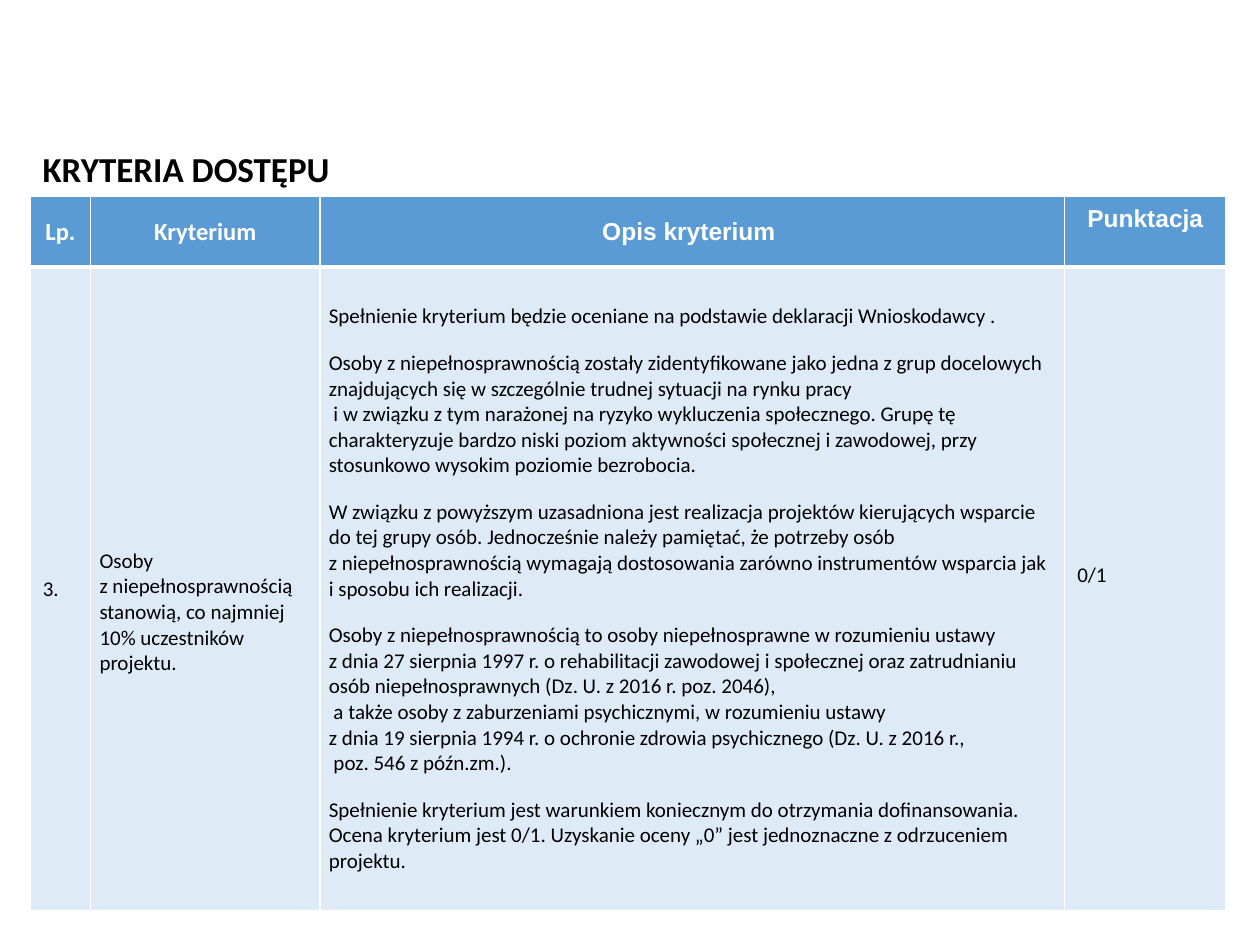
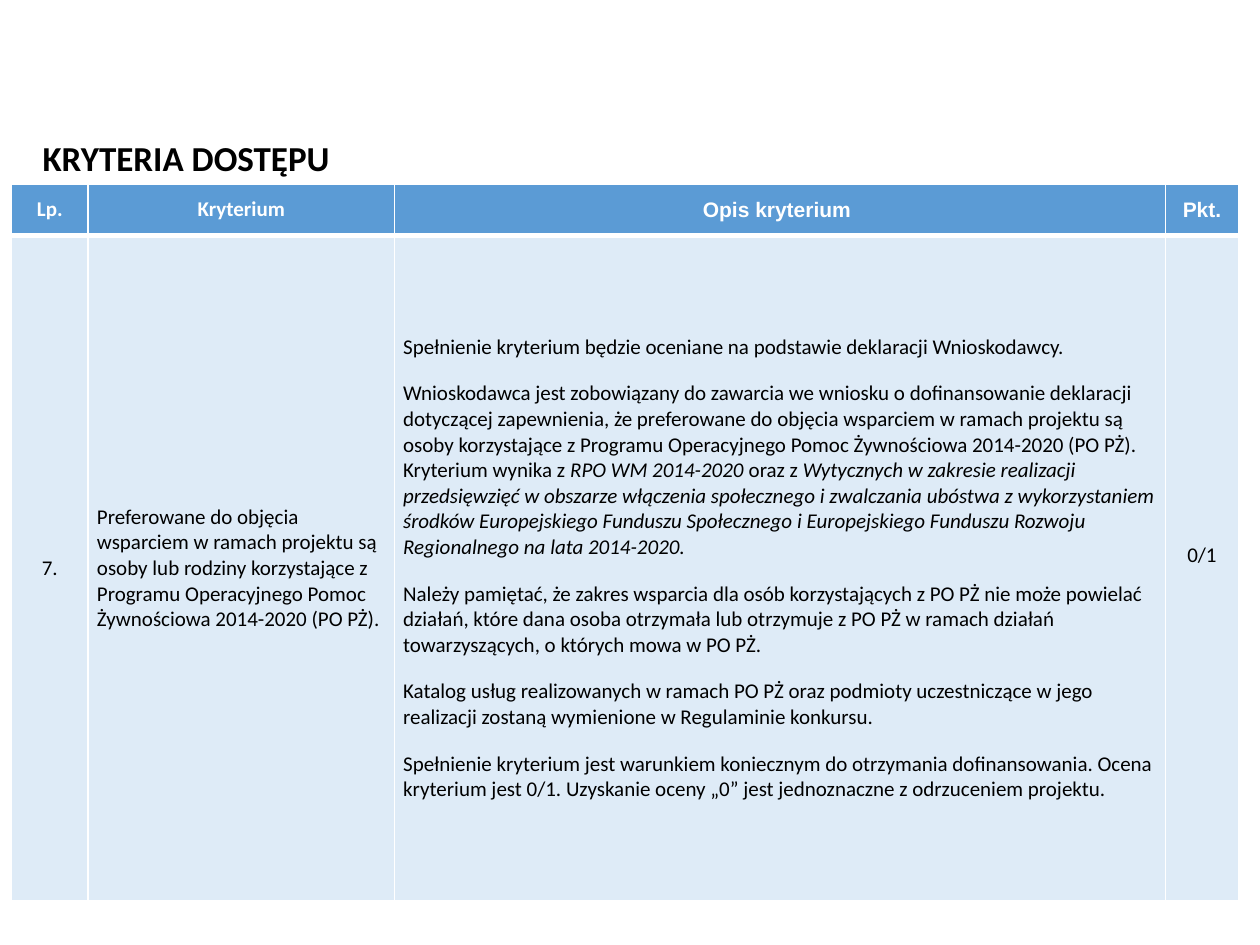
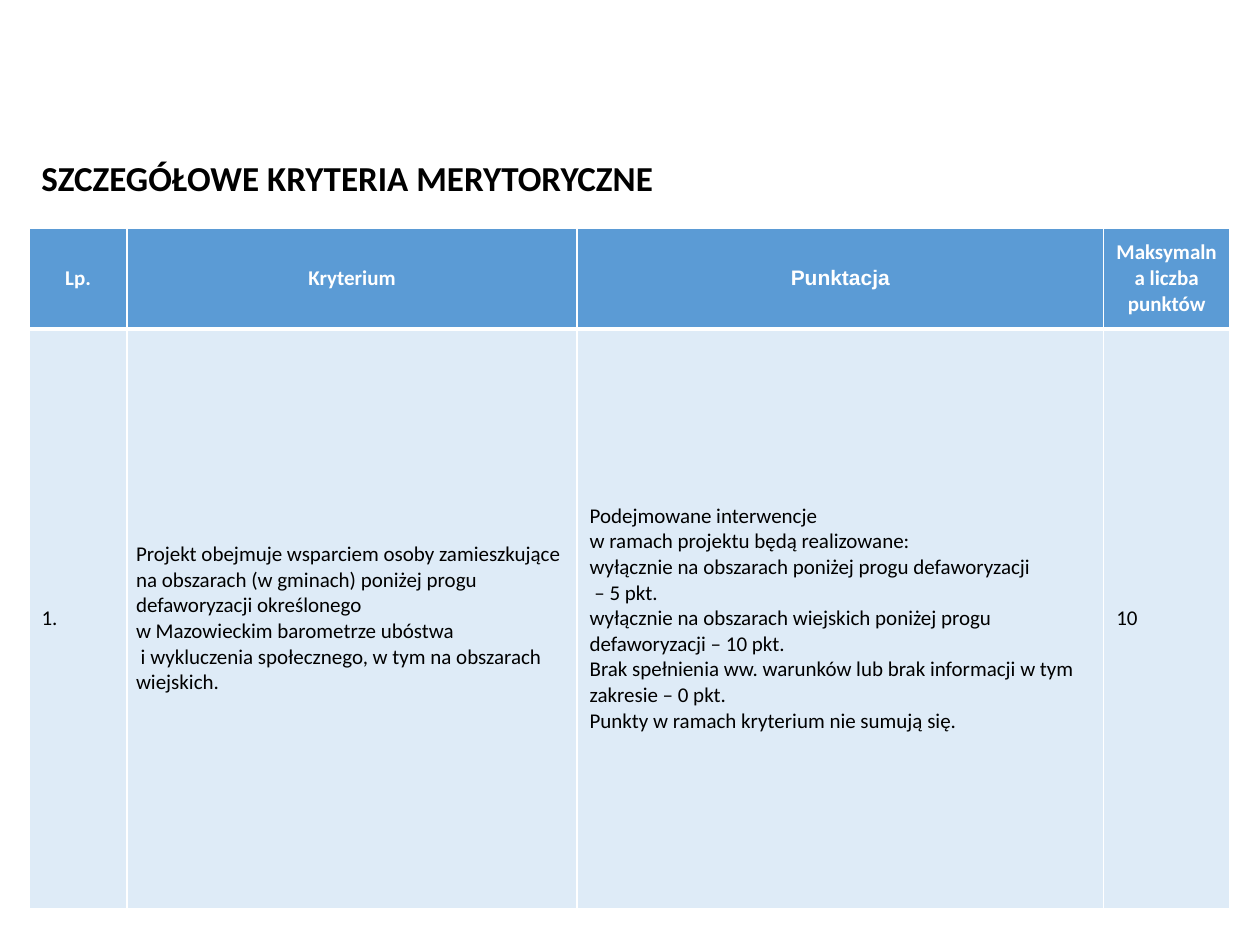
from dataclasses import dataclass

from lxml import etree
from pptx import Presentation
from pptx.dml.color import RGBColor
from pptx.enum.text import MSO_ANCHOR, PP_ALIGN
from pptx.oxml.ns import qn
from pptx.util import Emu, Inches, Pt

LEFT, CENTER = PP_ALIGN.LEFT, PP_ALIGN.CENTER
MIDDLE = MSO_ANCHOR.MIDDLE

COLORS = {"header": "5B9BD5", "body": "DEEBF7", "border": "FFFFFF",
          "light_text": "FFFFFF", "dark_text": "000000"}
SANS, HEADING_SANS = "Calibri", "Arial"
SLIDE_WIDTH, SLIDE_HEIGHT = Inches(10), Inches(7.5)
TITLE_SIZE, BODY_SIZE = 20, 12
PARAGRAPH_GAP = 12
THIN, THICK = 1, 3

# Cell margins in inches: left, top, right, bottom
STANDARD = (0.1, 0.05, 0.1, 0.05)
NARROW = (0.07, 0, 0.07, 0)
LOWERED = (0.07, 0.37, 0.07, 0)
RAISED = (0.1, 0.05, 0.1, 0.26)
NARROW_RAISED = (0.07, 0, 0.07, 0.2)

DECLARATION = "Spełnienie kryterium będzie oceniane na podstawie deklaracji Wnioskodawcy"
CONDITION = ("Spełnienie kryterium jest warunkiem koniecznym do otrzymania dofinansowania. "
             "Ocena kryterium jest 0/1. Uzyskanie oceny „0” jest jednoznaczne "
             "z odrzuceniem projektu.")


@dataclass(frozen=True)
class Cell:
    """Paragraphs of one cell; asterisks enclose italics."""
    paragraphs: tuple[str, ...]
    margins: tuple[float, ...] = STANDARD
    alignment: PP_ALIGN = LEFT
    font: str = SANS
    gap: float = 0


@dataclass(frozen=True)
class CriteriaSlide:
    """Places and lengths are percentages of the slide's width or height."""
    title: str
    title_place: tuple[float, float, float]
    table_place: tuple[float, float]
    columns: tuple[float, ...]
    rows: tuple[float, float]
    header_size: int
    header: tuple[Cell, ...]
    body: tuple[Cell, ...]


def across(percent: float) -> Emu:
    return Emu(round(SLIDE_WIDTH * percent / 100))


def down(percent: float) -> Emu:
    return Emu(round(SLIDE_HEIGHT * percent / 100))


def heading(text: str, font: str = SANS, margins: tuple[float, ...] = STANDARD) -> Cell:
    return Cell((text,), margins, CENTER, font)


CRITERIA_SLIDES = (
    CriteriaSlide(
        "KRYTERIA DOSTĘPU", (2.4, 14.93, 37), (2.4, 20.8),
        (4.8, 18.2, 59.1, 12.8), (7.47, 68.13), 14,
        (heading("Lp."), heading("Kryterium"), heading("Opis kryterium ", HEADING_SANS),
         heading("Punktacja", HEADING_SANS, RAISED)),
        (Cell(("3.",)),
         Cell(("Osoby \nz niepełnosprawnością stanowią, co najmniej 10% uczestników projektu.",),
              LOWERED),
         Cell((
             DECLARATION + " .",
             "Osoby z niepełnosprawnością zostały zidentyfikowane jako jedna z grup docelowych "
             "znajdujących się w szczególnie trudnej sytuacji na rynku pracy\n i w związku z tym "
             "narażonej na ryzyko wykluczenia społecznego. Grupę tę charakteryzuje bardzo niski "
             "poziom aktywności społecznej i zawodowej, przy stosunkowo wysokim poziomie "
             "bezrobocia.",
             "W związku z powyższym uzasadniona jest realizacja projektów kierujących wsparcie "
             "do tej grupy osób. Jednocześnie należy pamiętać, że potrzeby osób \n"
             "z niepełnosprawnością wymagają dostosowania zarówno instrumentów wsparcia jak "
             "i sposobu ich realizacji.",
             "Osoby z niepełnosprawnością to osoby niepełnosprawne w rozumieniu ustawy \n"
             "z dnia 27 sierpnia 1997 r. o rehabilitacji zawodowej i społecznej oraz "
             "zatrudnianiu osób niepełnosprawnych (Dz. U. z 2016 r. poz. 2046),\n"
             " a także osoby z zaburzeniami psychicznymi, w rozumieniu ustawy \n"
             "z dnia 19 sierpnia 1994 r. o ochronie zdrowia psychicznego (Dz. U. z 2016 r.,\n"
             " poz. 546 z późn.zm.).",
             CONDITION), NARROW, gap=PARAGRAPH_GAP),
         Cell(("0/1",), RAISED)),
    ),
    CriteriaSlide(
        "KRYTERIA DOSTĘPU", (2.4, 13.73, 37), (0.9, 19.47),
        (6.1, 24.3, 61.2, 5.8), (5.47, 70.4), 12,
        (heading("Lp."), heading("Kryterium"), heading("Opis kryterium ", HEADING_SANS),
         heading("Pkt.", HEADING_SANS)),
        (Cell(("7.",), alignment=CENTER),
         Cell(("Preferowane do objęcia wsparciem w ramach projektu są osoby lub rodziny "
               "korzystające z Programu Operacyjnego Pomoc Żywnościowa 2014-2020 (PO PŻ).",),
              NARROW),
         Cell((
             DECLARATION + ".",
             "Wnioskodawca jest zobowiązany do zawarcia we wniosku o dofinansowanie deklaracji "
             "dotyczącej zapewnienia, że preferowane do objęcia wsparciem w ramach projektu są "
             "osoby korzystające z Programu Operacyjnego Pomoc Żywnościowa 2014-2020 (PO PŻ). "
             "Kryterium wynika z* RPO WM 2014-2020 *oraz z *Wytycznych w zakresie realizacji "
             "przedsięwzięć w obszarze włączenia społecznego i zwalczania ubóstwa "
             "z wykorzystaniem środków Europejskiego Funduszu Społecznego i Europejskiego "
             "Funduszu Rozwoju Regionalnego na lata 2014-2020.*",
             "Należy pamiętać, że zakres wsparcia dla osób korzystających z PO PŻ nie może "
             "powielać działań, które dana osoba otrzymała lub otrzymuje z PO PŻ w ramach "
             "działań towarzyszących, o których mowa w PO PŻ.",
             "Katalog usług realizowanych w ramach PO PŻ oraz podmioty uczestniczące w jego "
             "realizacji zostaną wymienione w Regulaminie konkursu.",
             CONDITION), NARROW, gap=PARAGRAPH_GAP),
         Cell(("0/1",), NARROW_RAISED, CENTER)),
    ),
    CriteriaSlide(
        "SZCZEGÓŁOWE KRYTERIA MERYTORYCZNE", (2.3, 15.87, 93.5), (2.3, 24.13),
        (7.8, 35.7, 41.8, 10), (10.67, 61.33), 12,
        (heading("Lp."), heading("Kryterium"), heading("Punktacja", HEADING_SANS),
         heading("Maksymalna liczba punktów")),
        (Cell(("1.",)),
         Cell((
             "Projekt obejmuje wsparciem osoby zamieszkujące na obszarach (w gminach) poniżej "
             "progu defaworyzacji określonego",
             "w Mazowieckim barometrze ubóstwa",
             " i wykluczenia społecznego, w tym na obszarach wiejskich."), NARROW),
         Cell((
             "Podejmowane interwencje \nw ramach projektu będą realizowane:",
             "wyłącznie na obszarach poniżej progu defaworyzacji\n – 5 pkt.",
             "wyłącznie na obszarach wiejskich poniżej progu defaworyzacji – 10 pkt.",
             "Brak spełnienia ww. warunków lub brak informacji w tym zakresie – 0 pkt.",
             "Punkty w ramach kryterium nie sumują się.")),
         Cell(("10",))),
    ),
)


def write_text(text_frame, paragraphs: tuple[str, ...], *, size: float, color: str,
               font: str = SANS, bold: bool = False, alignment: PP_ALIGN = LEFT,
               gap: float = 0) -> None:
    for index, text in enumerate(paragraphs):
        paragraph = text_frame.add_paragraph() if index else text_frame.paragraphs[0]
        paragraph.alignment = alignment
        if index:
            paragraph.space_before = Pt(gap)
        for line_index, line in enumerate(text.split("\n")):
            if line_index:
                paragraph.add_line_break()
            for part_index, part in enumerate(line.split("*")):
                if not part:
                    continue
                run = paragraph.add_run()
                run.text = part
                run.font.name = font
                run.font.size = Pt(size)
                run.font.bold = bold
                run.font.italic = part_index % 2 == 1
                run.font.color.rgb = RGBColor.from_string(COLORS[color])


def set_borders(table_cell, top: float, bottom: float) -> None:
    properties = table_cell._tc.get_or_add_tcPr()
    widths = {"a:lnL": THIN, "a:lnR": THIN, "a:lnT": top, "a:lnB": bottom}
    for position, (tag, width) in enumerate(widths.items()):
        line = etree.Element(qn(tag), w=str(Pt(width)))
        fill = etree.SubElement(line, qn("a:solidFill"))
        etree.SubElement(fill, qn("a:srgbClr"), val=COLORS["border"])
        properties.insert(position, line)


def fill_cell(table_cell, content: Cell, is_header: bool, size: float) -> None:
    table_cell.fill.solid()
    table_cell.fill.fore_color.rgb = RGBColor.from_string(
        COLORS["header" if is_header else "body"])
    table_cell.vertical_anchor = MIDDLE
    (table_cell.margin_left, table_cell.margin_top,
     table_cell.margin_right, table_cell.margin_bottom) = map(Inches, content.margins)
    set_borders(table_cell, *((THIN, THICK) if is_header else (THICK, THIN)))
    write_text(table_cell.text_frame, content.paragraphs, size=size, bold=is_header,
               color="light_text" if is_header else "dark_text", font=content.font,
               alignment=content.alignment, gap=content.gap)


def add_criteria_table(slide, criteria: CriteriaSlide) -> None:
    left, top = criteria.table_place
    table = slide.shapes.add_table(
        len(criteria.rows), len(criteria.columns), across(left), down(top),
        across(sum(criteria.columns)), down(sum(criteria.rows))).table
    for column, width in zip(table.columns, criteria.columns):
        column.width = across(width)
    for row, height in zip(table.rows, criteria.rows):
        row.height = down(height)
    for column_index, (header, body) in enumerate(zip(criteria.header, criteria.body)):
        fill_cell(table.cell(0, column_index), header, True, criteria.header_size)
        fill_cell(table.cell(1, column_index), body, False, BODY_SIZE)


def add_title(slide, criteria: CriteriaSlide) -> None:
    left, top, width = criteria.title_place
    box = slide.shapes.add_textbox(across(left), down(top), across(width), down(5.87))
    box.text_frame.word_wrap = True
    box.text_frame.vertical_anchor = MIDDLE
    write_text(box.text_frame, (criteria.title,), size=TITLE_SIZE, color="dark_text", bold=True)


def main() -> None:
    presentation = Presentation()
    presentation.slide_width, presentation.slide_height = SLIDE_WIDTH, SLIDE_HEIGHT
    blank_layout = presentation.slide_layouts[6]
    for criteria in CRITERIA_SLIDES:
        slide = presentation.slides.add_slide(blank_layout)
        add_criteria_table(slide, criteria)
        add_title(slide, criteria)
    presentation.save("out.pptx")


if __name__ == "__main__":
    main()
